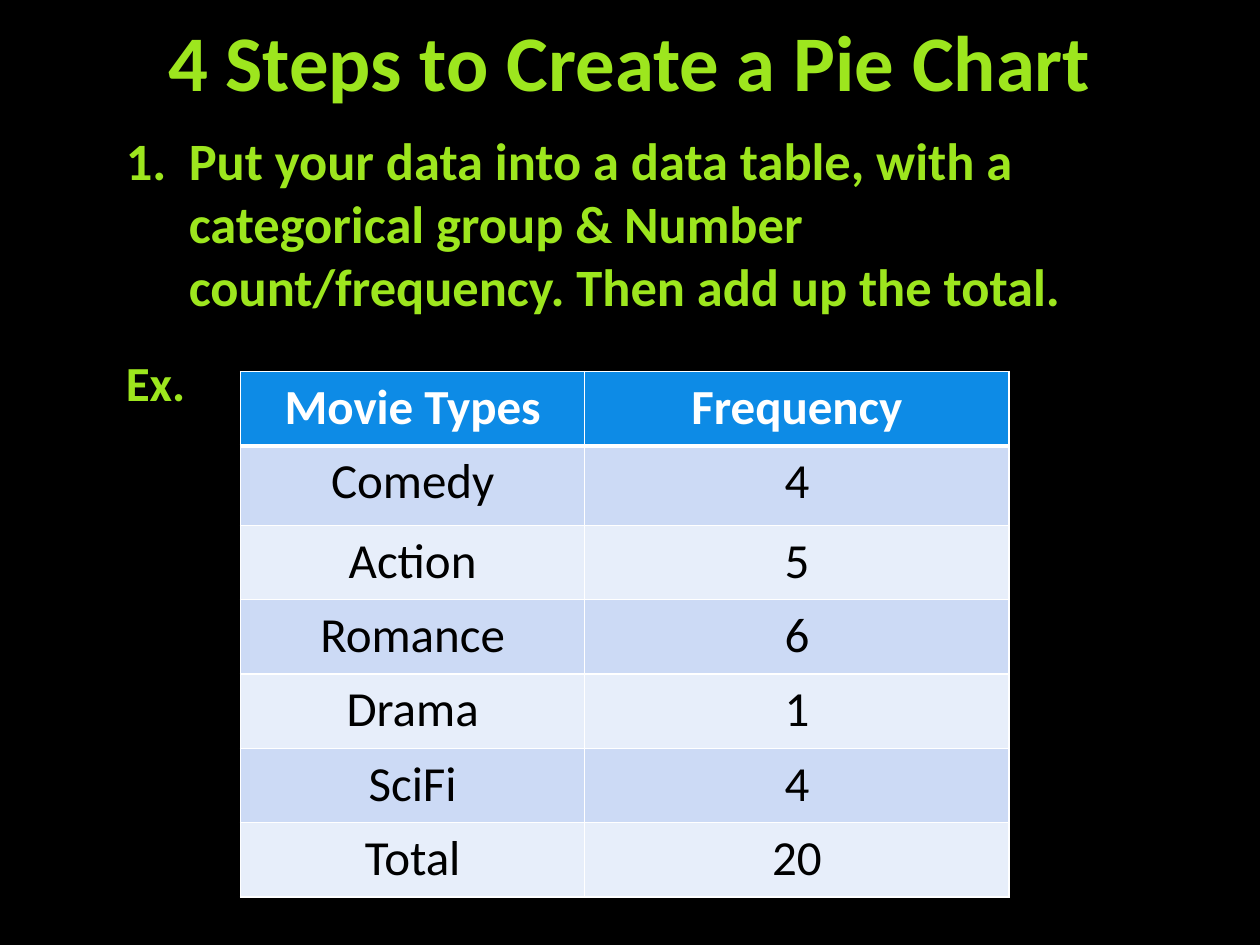
import pptx
import pptx.util
import pptx.dml.color
import pptx.enum.text
import pptx.oxml.ns
import lxml.etree

Inches = pptx.util.Inches
Pt = pptx.util.Pt
ALIGN = pptx.enum.text.PP_ALIGN
ANCHOR = pptx.enum.text.MSO_ANCHOR
qn = pptx.oxml.ns.qn

COLORS = {
    "background": "000000",
    "lime": "9DE61E",
    "header": "0D8BE6",
    "band_dark": "CCDAF5",
    "band_light": "E7EEFA",
    "white": "FFFFFF",
    "black": "000000",
}


def style(paragraph, size, color, bold):
    paragraph.font.name = "Calibri"
    paragraph.font.size = Pt(size)
    paragraph.font.bold = bold
    paragraph.font.color.rgb = pptx.dml.color.RGBColor.from_string(COLORS[color])


def add_border(cell, side, width):
    line = lxml.etree.SubElement(cell._tc.get_or_add_tcPr(), qn(f"a:ln{side}"), w=str(Pt(width)))
    fill = lxml.etree.SubElement(line, qn("a:solidFill"))
    lxml.etree.SubElement(fill, qn("a:srgbClr"), val=COLORS["white"])


presentation = pptx.Presentation()
presentation.slide_width = Inches(10)
presentation.slide_height = Inches(7.5)
slide = presentation.slides.add_slide(presentation.slide_layouts[6])
slide.background.fill.solid()
slide.background.fill.fore_color.rgb = pptx.dml.color.RGBColor.from_string(COLORS["background"])

# Title
title = slide.shapes.add_textbox(Inches(0.85), Inches(0.05), Inches(8.29), Inches(0.86))
title.text_frame.word_wrap = True
title.text_frame.vertical_anchor = ANCHOR.MIDDLE
paragraph = title.text_frame.paragraphs[0]
paragraph.text = "4 Steps to Create a Pie Chart"
paragraph.alignment = ALIGN.CENTER
style(paragraph, 45, "lime", True)

# Numbered step and example label
body = slide.shapes.add_textbox(Inches(0.9), Inches(0.97), Inches(8.29), Inches(4.32))
body.text_frame.word_wrap = True
step = body.text_frame.paragraphs[0]
step.text = (
    "Put your data into a data table, with a categorical group & Number "
    "count/frequency. Then add up the total."
)
properties = step._p.get_or_add_pPr()
properties.set("marL", str(Inches(0.5)))
properties.set("indent", str(Inches(-0.5)))
lxml.etree.SubElement(properties, qn("a:buFont"), typeface="+mj-lt")
lxml.etree.SubElement(properties, qn("a:buAutoNum"), type="arabicPeriod")
style(step, 30, "lime", True)

example = body.text_frame.add_paragraph()
example.text = "Ex."
example.space_before = Pt(20)
style(example, 28, "lime", True)

# Frequency table
rows = [
    ("Movie Types", "Frequency"),
    ("Comedy", "4"),
    ("Action", "5"),
    ("Romance", "6"),
    ("Drama", "1"),
    ("SciFi", "4"),
    ("Total", "20"),
]
table = slide.shapes.add_table(
    len(rows), 2, Inches(1.91), Inches(2.95), Inches(6.1), Inches(4.14)
).table
for column, width in zip(table.columns, (2.73, 3.37)):
    column.width = Inches(width)
for row in table.rows:
    row.height = Inches(0.59)
table.rows[1].height = Inches(0.63)

for row_index, values in enumerate(rows):
    is_header = row_index == 0
    band = "header" if is_header else ("band_light", "band_dark")[row_index % 2]
    for column_index, value in enumerate(values):
        cell = table.cell(row_index, column_index)
        for side in "LRTB":
            thick = (is_header and side == "B") or (row_index == 1 and side == "T")
            add_border(cell, side, 3 if thick else 1)
        cell.fill.solid()
        cell.fill.fore_color.rgb = pptx.dml.color.RGBColor.from_string(COLORS[band])
        paragraph = cell.text_frame.paragraphs[0]
        paragraph.text = value
        paragraph.alignment = ALIGN.CENTER
        style(paragraph, 28, "white" if is_header else "black", is_header)

presentation.save("out.pptx")
